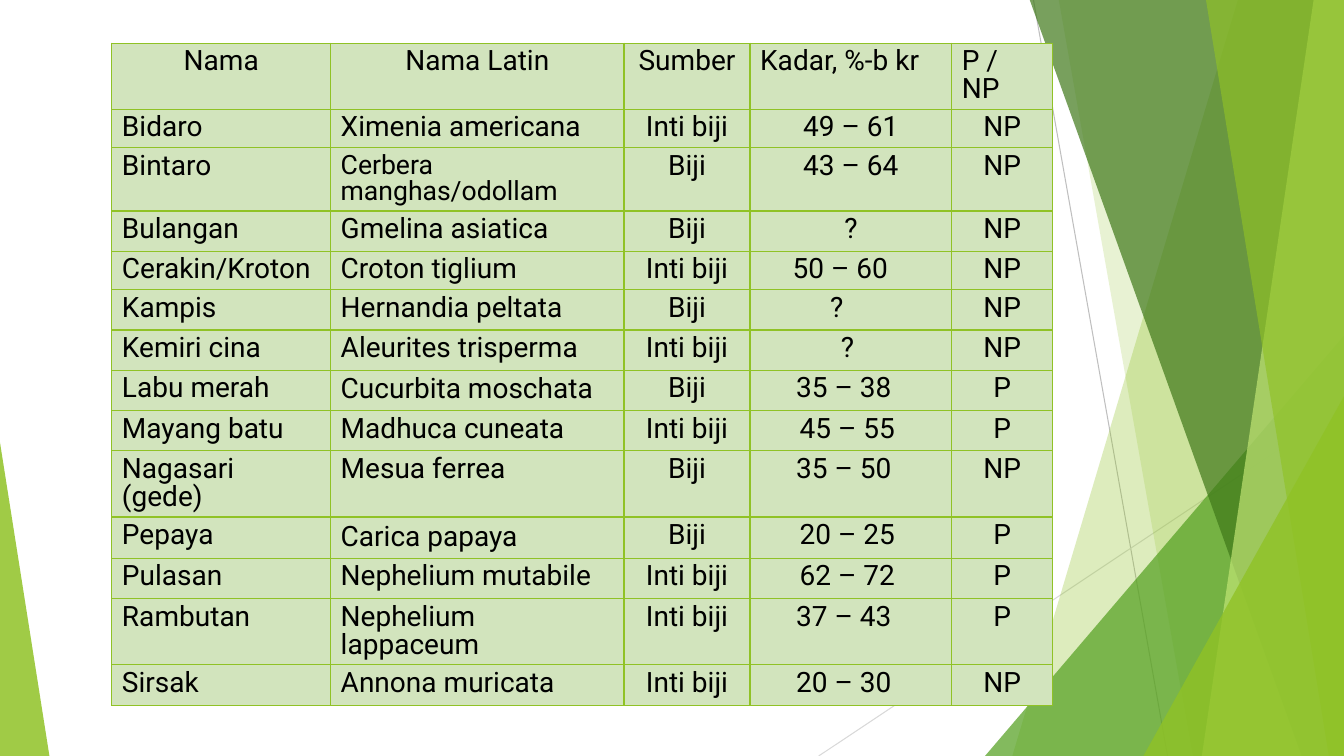
from dataclasses import dataclass

from lxml.etree import SubElement
from pptx import Presentation
from pptx.dml.color import RGBColor
from pptx.enum.shapes import MSO_CONNECTOR, MSO_SHAPE
from pptx.enum.text import MSO_ANCHOR, PP_ALIGN
from pptx.oxml import parse_xml
from pptx.oxml.ns import nsdecls, qn
from pptx.util import Pt

PX = 9144  # EMU in one px, 100 px to the inch
WIDE, HIGH = 1333, 750


@dataclass(frozen=True)
class Theme:
    lime: str = "90C226"
    green: str = "54A021"
    dark: str = "3F7819"
    pale: str = "C0E474"
    cell: str = "D2E4BD"
    ink: str = "000000"
    font: str = "Roboto"
    size: int = 20
    small: int = 19
    space: float = 0.85
    rule: float = 0.75
    border: float = 1


THEME = Theme()


@dataclass(frozen=True)
class Ray:
    start: tuple[int, int]
    end: tuple[int, int]
    color: str


@dataclass(frozen=True)
class Band:
    """Runs from a top x and a bottom x to the right edge."""
    top: int
    base: int
    color: str
    alpha: int


@dataclass(frozen=True)
class Wedge:
    """Triangle on the bottom edge; tip is 0 for left, 1 for right."""
    left: int
    top: int
    width: int
    tip: int
    color: str
    alpha: int


@dataclass(frozen=True)
class Plant:
    name: str
    latin: str
    source: str
    yield_: str
    kind: str
    high: int = 40
    shift: int = 0  # extra right margin of the yield
    mid: bool = False
    size: int = THEME.size


RAYS = [
    Ray((1025, 0), (1158, HIGH), "BFBFBF"),
    Ray((WIDE, 403), (812, HIGH), "D9D9D9"),
]
FACETS = [
    Band(1228, 1004, THEME.lime, 30),
    Band(1050, 1183, THEME.lime, 20),
    Wedge(977, 333, 356, 1, THEME.green, 72),
    Band(1021, 1291, THEME.dark, 70),
    Band(1303, 1192, THEME.pale, 70),
    Band(1196, 1318, THEME.lime, 65),
    Wedge(1134, 393, 199, 1, THEME.lime, 80),
    Wedge(0, 439, 49, 0, THEME.lime, 85),
]
WIDTHS = [217, 291, 125, 200, 100]
LEFT, CENTER = PP_ALIGN.LEFT, PP_ALIGN.CENTER
HEAD_ALIGN = [CENTER, CENTER, CENTER, LEFT, LEFT]
BODY_ALIGN = [LEFT, LEFT, CENTER, CENTER, CENTER]
PLANTS = [
    Plant("Nama", "Nama Latin", "Sumber", "Kadar, %-b kr", "P / NP", 38),
    Plant("Bidaro", "Ximenia americana", "Inti biji", "49 – 61", "NP", 38),
    Plant("Bintaro", "Cerbera manghas/odollam", "Biji", "43 – 64", "NP", 38,
          mid=True, size=THEME.small),
    Plant("Bulangan", "Gmelina asiatica", "Biji", "?", "NP"),
    Plant("Cerakin/Kroton", "Croton tiglium", "Inti biji", "50 – 60", "NP", 38, 21),
    Plant("Kampis", "Hernandia peltata", "Biji", "?", "NP", shift=28),
    Plant("Kemiri cina", "Aleurites trisperma", "Inti biji", "?", "NP", shift=7),
    Plant("Labu merah", "Cucurbita moschata", "Biji", "35 – 38", "P", shift=14, mid=True),
    Plant("Mayang batu", "Madhuca cuneata", "Inti biji", "45 – 55", "P", shift=7),
    Plant("Nagasari (gede)", "Mesua ferrea", "Biji", "35 – 50", "NP", shift=14),
    Plant("Pepaya", "Carica papaya", "Biji", "20 – 25", "P", 41, 7, True),
    Plant("Pulasan", "Nephelium mutabile", "Inti biji", "62 – 72", "P", shift=7),
    Plant("Rambutan", "Nephelium lappaceum", "Inti biji", "37 – 43", "P", shift=14),
    Plant("Sirsak", "Annona muricata", "Inti biji", "20 – 30", "NP", shift=14),
]


def rgb(color: str) -> RGBColor:
    return RGBColor.from_string(color)


def draw_ray(shapes, ray: Ray) -> None:
    ends = [v * PX for v in ray.start + ray.end]
    line = shapes.add_connector(MSO_CONNECTOR.STRAIGHT, *ends)
    line.line.color.rgb = rgb(ray.color)
    line.line.width = Pt(THEME.rule)
    SubElement(line._element.spPr, qn("a:effectLst"))


def draw_facet(shapes, facet: Band | Wedge) -> None:
    if isinstance(facet, Band):
        pen = shapes.build_freeform(facet.top, -1, scale=PX)
        pen.add_line_segments([(WIDE, -1), (WIDE, HIGH), (facet.base, HIGH)], close=True)
        shape = pen.convert_to_shape()
    else:
        box = (facet.left, facet.top, facet.width, HIGH - facet.top)
        shape = shapes.add_shape(MSO_SHAPE.ISOSCELES_TRIANGLE, *(v * PX for v in box))
        shape.adjustments[0] = facet.tip
    shape.shadow.inherit = False
    shape.line.fill.background()
    shape.fill.solid()
    shape.fill.fore_color.rgb = rgb(facet.color)
    tint = shape._element.spPr.find(qn("a:solidFill"))[0]
    SubElement(tint, qn("a:alpha"), val=str(facet.alpha * 1000))


def draw_cell(cell, text: str, align: PP_ALIGN, size: int) -> None:
    cell.fill.solid()
    cell.fill.fore_color.rgb = rgb(THEME.cell)
    para = cell.text_frame.paragraphs[0]
    para.alignment = align
    para.line_spacing = THEME.space
    run = para.add_run()
    run.text = text
    run.font.name = THEME.font
    run.font.size = Pt(size)
    run.font.color.rgb = rgb(THEME.ink)
    # Borders come before the fill in the cell properties
    props = cell._tc.get_or_add_tcPr()
    for i, side in enumerate("LRTB"):
        props.insert(i, parse_xml(
            f'<a:ln{side} {nsdecls("a")} w="{Pt(THEME.border)}"><a:solidFill>'
            f'<a:srgbClr val="{THEME.lime}"/></a:solidFill></a:ln{side}>'))


def draw_table(shapes, plants: list[Plant]) -> None:
    box = (111, 43, sum(WIDTHS), sum(p.high for p in plants))
    frame = shapes.add_table(len(plants), len(WIDTHS), *(v * PX for v in box))
    table = frame.table
    table.first_row = table.horz_banding = False
    for col, width in zip(table.columns, WIDTHS):
        col.width = width * PX
    for i, (row, plant) in enumerate(zip(table.rows, plants)):
        row.height = plant.high * PX
        texts = (plant.name, plant.latin, plant.source, plant.yield_, plant.kind)
        aligns = BODY_ALIGN if i else HEAD_ALIGN
        for j, (cell, text, align) in enumerate(zip(row.cells, texts, aligns)):
            draw_cell(cell, text, align, plant.size if j == 1 else THEME.size)
        if plant.mid:
            row.cells[1].vertical_anchor = MSO_ANCHOR.MIDDLE
        if plant.shift:
            row.cells[3].margin_right = (10 + plant.shift) * PX


def main() -> None:
    deck = Presentation()
    deck.slide_width, deck.slide_height = WIDE * PX, HIGH * PX
    shapes = deck.slides.add_slide(deck.slide_layouts[6]).shapes
    # Backdrop
    for ray in RAYS:
        draw_ray(shapes, ray)
    for facet in FACETS:
        draw_facet(shapes, facet)
    # Plant table
    draw_table(shapes, PLANTS)
    deck.save("out.pptx")


if __name__ == "__main__":
    main()
